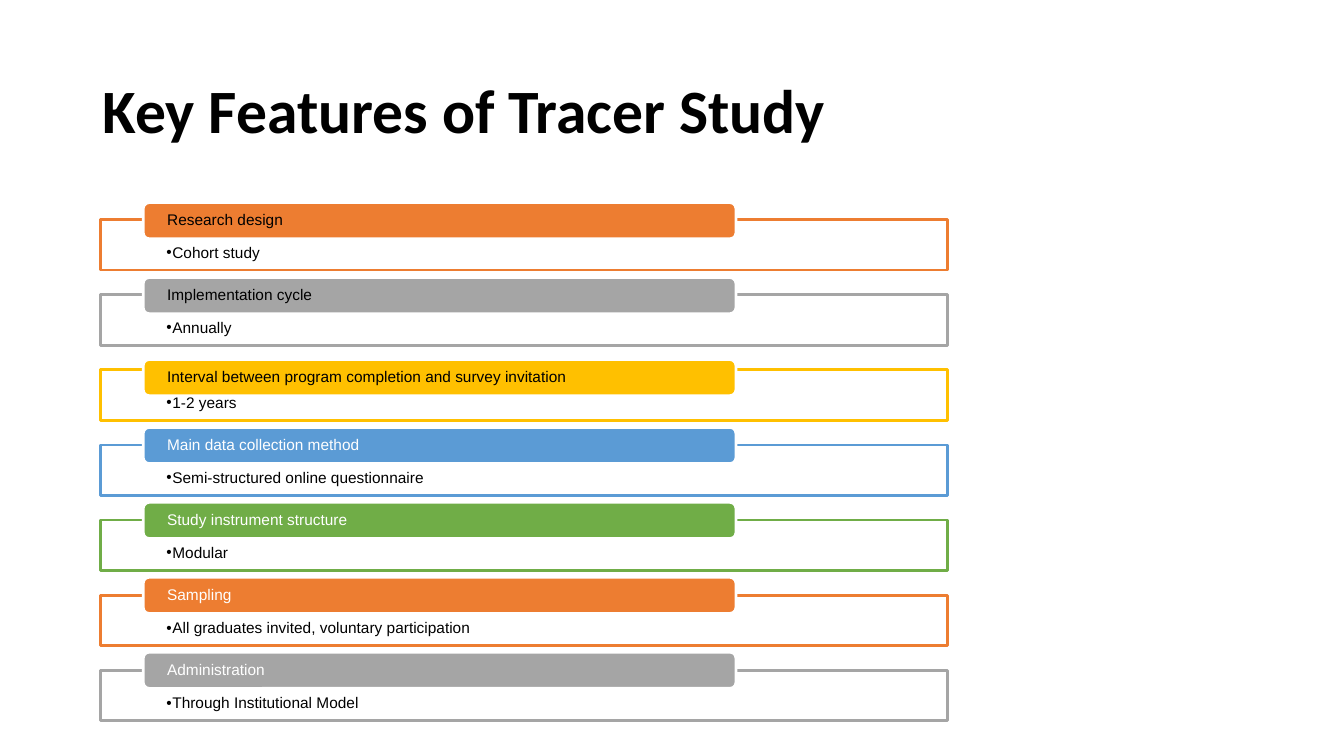
from lxml.etree import SubElement
from pptx import Presentation
from pptx.dml.color import RGBColor
from pptx.enum.shapes import MSO_SHAPE
from pptx.enum.text import MSO_ANCHOR, PP_ALIGN
from pptx.oxml.ns import qn
from pptx.util import Pt

TITLE = "Key Features of Tracer Study"
# heading, detail, accent, heading colour, extra px the heading sits lower
FEATURES = [
    ("Research design", "Cohort study", "orange", "black", 0),
    ("Implementation cycle", "Annually", "gray", "black", 0),
    ("Interval between program completion and survey invitation", "1-2 years", "gold", "black", 7),
    ("Main data collection method", "Semi-structured online questionnaire", "blue", "white", 0),
    ("Study instrument structure", "Modular", "green", "white", 0),
    ("Sampling", "All graduates invited, voluntary participation", "orange", "white", 0),
    ("Administration", "Through Institutional Model", "gray", "white", 0),
]


class Theme:
    colors = {"orange": "ED7D31", "gray": "A5A5A5", "gold": "FFC000", "blue": "5B9BD5",
              "green": "70AD47", "black": "000000", "white": "FFFFFF"}
    title = {"name": "Calibri", "size": Pt(44), "bold": True}
    body = {"name": "Arial", "size": Pt(11), "bold": False}
    line_width = Pt(2)
    line_spacing = 0.9


PX = 9144  # 100 px to the inch
SLIDE_SIZE = (1333, 750)
TITLE_BOX = (92, 40, 1150, 145)
BOX_LEFT, BOX_WIDTH, BOX_HEIGHT = 100, 840, 50
LABEL_LEFT, LABEL_WIDTH, LABEL_HEIGHT = 142, 588, 36
BOX_TOPS = (218, 665)  # first and last row
LABEL_TOPS = (201, 647)
BULLET_INDENT = 6


def emu(px):
    return round(px * PX)


def row_top(tops, row):
    first, last = tops
    return first + row * (last - first) / (len(FEATURES) - 1)


def color(name):
    return RGBColor.from_string(Theme.colors[name])


def set_all(target, values):
    for name, value in values.items():
        setattr(target, name, value)


def write(shape, text, font, color_name, insets, anchor):
    """Put one left-aligned paragraph in the shape; insets are left, top, right, bottom."""
    left, top, right, bottom = map(emu, insets)
    frame = shape.text_frame
    set_all(frame, {"word_wrap": True, "vertical_anchor": anchor, "margin_left": left,
                    "margin_top": top, "margin_right": right, "margin_bottom": bottom})
    paragraph = frame.paragraphs[0]
    set_all(paragraph, {"alignment": PP_ALIGN.LEFT, "line_spacing": Theme.line_spacing})
    run = paragraph.add_run()
    run.text = text
    set_all(run.font, font)
    run.font.color.rgb = color(color_name)
    return paragraph


def add_bullet(paragraph):
    properties = paragraph._p.get_or_add_pPr()
    properties.set("marL", str(emu(BULLET_INDENT)))
    properties.set("indent", str(-emu(BULLET_INDENT)))
    bullet_color = SubElement(properties, qn("a:buClr"))
    SubElement(bullet_color, qn("a:srgbClr"), val=Theme.colors["black"])
    SubElement(properties, qn("a:buFont"), typeface=Theme.body["name"])
    SubElement(properties, qn("a:buChar"), char="•")
    set_all(paragraph.font, Theme.body)


def add_panel(slide, kind, box, fill, line):
    shape = slide.shapes.add_shape(kind, *map(emu, box))
    shape.shadow.inherit = False
    shape.fill.solid()
    shape.fill.fore_color.rgb = color(fill)
    shape.line.color.rgb = color(line)
    shape.line.width = Theme.line_width
    return shape


def add_feature(slide, row, feature):
    heading, detail, accent, heading_color, drop = feature
    box = add_panel(slide, MSO_SHAPE.RECTANGLE,
                    (BOX_LEFT, row_top(BOX_TOPS, row), BOX_WIDTH, BOX_HEIGHT), "white", accent)
    fill_color = box.fill._xPr.find(qn("a:solidFill"))[0]
    SubElement(fill_color, qn("a:alpha"), val="90000")
    add_bullet(write(box, detail, Theme.body, "black", (65, 25, 65, 9), MSO_ANCHOR.TOP))
    label = add_panel(slide, MSO_SHAPE.ROUNDED_RECTANGLE,
                      (LABEL_LEFT, row_top(LABEL_TOPS, row) + drop, LABEL_WIDTH, LABEL_HEIGHT),
                      accent, "white")
    write(label, heading, Theme.body, heading_color, (22, 0, 22, 0), MSO_ANCHOR.MIDDLE)


def main():
    presentation = Presentation()
    presentation.slide_width, presentation.slide_height = map(emu, SLIDE_SIZE)
    slide = presentation.slides.add_slide(presentation.slide_layouts[6])
    title = slide.shapes.add_textbox(*map(emu, TITLE_BOX))
    write(title, TITLE, Theme.title, "black", (10, 5, 10, 5), MSO_ANCHOR.MIDDLE)
    for row, feature in enumerate(FEATURES):
        add_feature(slide, row, feature)
    presentation.save("out.pptx")


if __name__ == "__main__":
    main()
